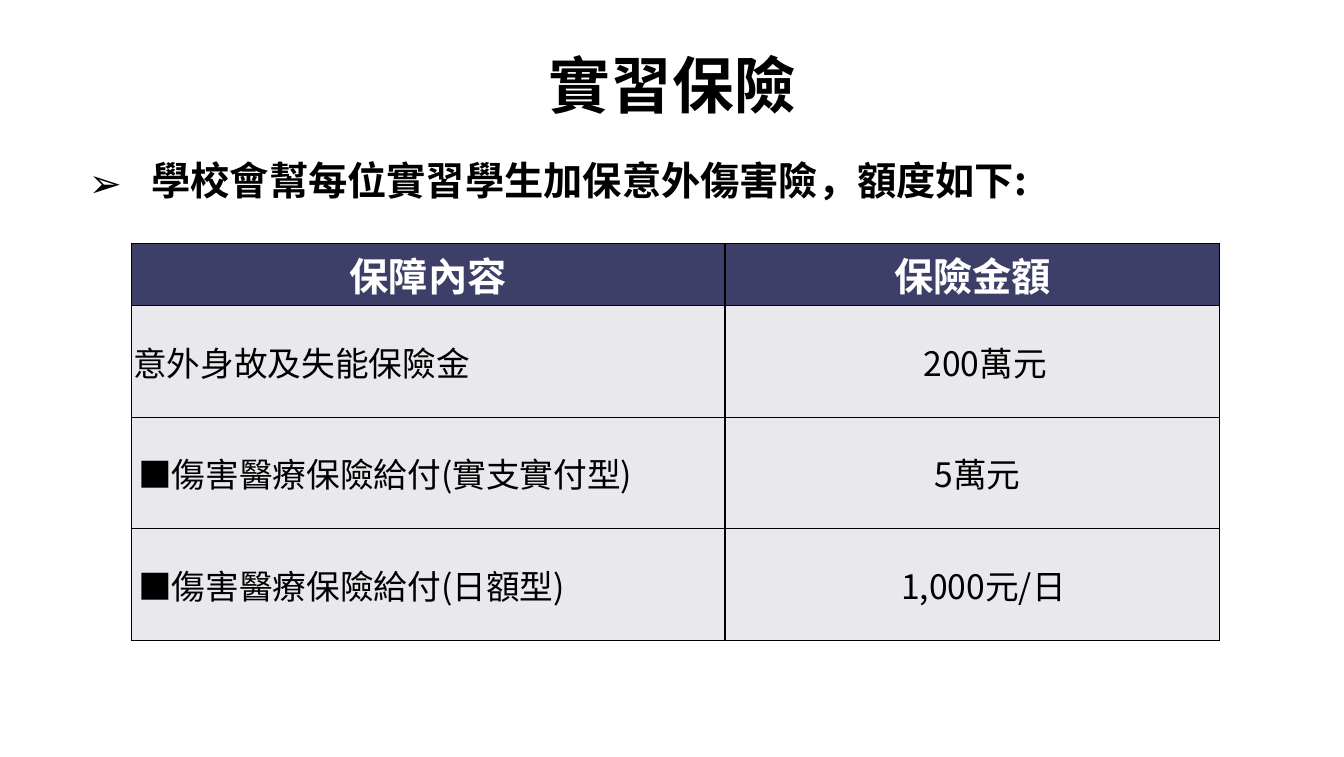
import pptx
import pptx.util
import pptx.dml.color
import pptx.enum.text
import pptx.oxml
import pptx.oxml.ns

PX = 9144
FONT = "Noto Sans CJK SC"
BLACK = pptx.dml.color.RGBColor(0, 0, 0)
WHITE = pptx.dml.color.RGBColor(255, 255, 255)
NAVY = pptx.dml.color.RGBColor(0x3E, 0x3F, 0x68)
PALE = pptx.dml.color.RGBColor(0xE9, 0xE9, 0xED)
ALIGN = pptx.enum.text.PP_ALIGN
MIDDLE = pptx.enum.text.MSO_ANCHOR.MIDDLE
BOTTOM = pptx.enum.text.MSO_ANCHOR.BOTTOM
FIXED = pptx.enum.text.MSO_AUTO_SIZE.NONE
NS = pptx.oxml.ns.nsdecls("a")

COLS = [588, 490]
ROWS = [62, 111, 110, 111]
HEADS = ["保障內容", "保險金額"]
COVERS = [
    ("意外身故及失能保險金", ALIGN.JUSTIFY, 0, "200萬元", 25),
    ("■傷害醫療保險給付(實支實付型)", ALIGN.LEFT, 5, "5萬元", 10),
    ("■傷害醫療保險給付(日額型)", ALIGN.LEFT, 5, "1,000元/日", 22),
]


def px(count):
    return pptx.util.Emu(count * PX)


def write(frame, text, size, color, bold, align, left=0, first=0):
    frame.text = text
    para = frame.paragraphs[0]
    para.alignment = align
    para.space_before = pptx.util.Pt(0)
    props = para._p.get_or_add_pPr()
    props.set("marL", str(px(left)))
    props.set("indent", str(px(first)))
    font = para.runs[0].font
    font.name = FONT
    font.size = pptx.util.Pt(size)
    font.bold = bold
    font.color.rgb = color
    font._element.find(pptx.oxml.ns.qn("a:latin")).addnext(
        pptx.oxml.parse_xml(f'<a:ea {NS} typeface="{FONT}"/>'))
    return props


def place(shape, box):
    shape.left, shape.top, shape.width, shape.height = map(px, box)
    shape.text_frame.auto_size = FIXED
    shape.text_frame.word_wrap = True


def add_title(slide, box):
    title = slide.shapes.title
    place(title, box)
    title.text_frame.vertical_anchor = BOTTOM
    write(title.text_frame, "實習保險", 44, BLACK, True, ALIGN.CENTER)


def add_lead(slide, box):
    body = slide.placeholders[1]
    place(body, box)
    props = write(body.text_frame, "學校會幫每位實習學生加保意外傷害險，額度如下:",
                  28, BLACK, True, ALIGN.LEFT, 62, -62)
    props.append(pptx.oxml.parse_xml(f'<a:buFont {NS} typeface="{FONT}"/>'))
    props.append(pptx.oxml.parse_xml(f'<a:buChar {NS} char="➢"/>'))


def style(cell, fill):
    props = cell._tc.get_or_add_tcPr()
    for side in "LRTB":
        props.append(pptx.oxml.parse_xml(
            f'<a:ln{side} {NS} w="12700"><a:solidFill>'
            f'<a:srgbClr val="{BLACK}"/></a:solidFill></a:ln{side}>'))
    cell.fill.solid()
    cell.fill.fore_color.rgb = fill
    cell.vertical_anchor = MIDDLE
    cell.margin_left = cell.margin_right = px(2)
    cell.margin_top = cell.margin_bottom = 0


def add_grid(slide, box):
    grid = slide.shapes.add_table(len(ROWS), len(COLS), *map(px, box)).table
    grid.horz_banding = False
    for col, width in zip(grid.columns, COLS):
        col.width = px(width)
    for row, height in zip(grid.rows, ROWS):
        row.height = px(height)
    for col, head in enumerate(HEADS):
        cell = grid.cell(0, col)
        style(cell, NAVY)
        write(cell.text_frame, head, 28, WHITE, True, ALIGN.CENTER)
    for row, (name, align, left, sum_, shift) in enumerate(COVERS, 1):
        pair = grid.cell(row, 0), grid.cell(row, 1)
        for cell in pair:
            style(cell, PALE)
        write(pair[0].text_frame, name, 24, BLACK, False, align, left)
        write(pair[1].text_frame, sum_, 24, BLACK, False, ALIGN.CENTER, 0, shift)


def main():
    deck = pptx.Presentation()
    deck.slide_width, deck.slide_height = px(1331), px(750)
    slide = deck.slides.add_slide(deck.slide_layouts[1])
    add_title(slide, (67, 25, 1198, 100))
    add_lead(slide, (78, 150, 969, 57))
    add_grid(slide, (130, 241, sum(COLS), sum(ROWS)))
    deck.save("out.pptx")


if __name__ == "__main__":
    main()
